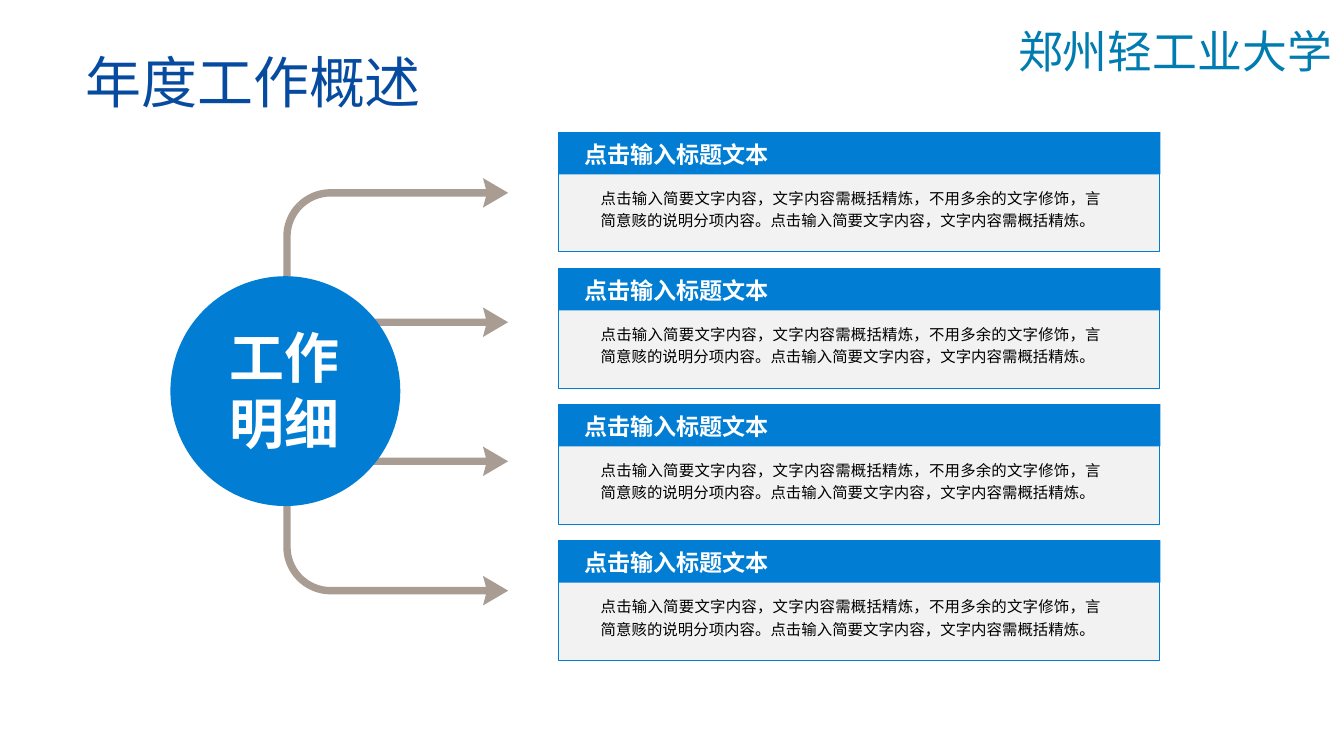
from math import cos, radians, sin

from lxml.etree import SubElement
from pptx import Presentation
from pptx.dml.color import RGBColor
from pptx.enum.shapes import MSO_SHAPE as Shape
from pptx.enum.text import MSO_ANCHOR as Anchor, PP_ALIGN as Align
from pptx.oxml.ns import qn
from pptx.util import Inches, Pt

FONT = "Noto Sans CJK SC"
BLUE = RGBColor(0x01, 0x7E, 0xD3)
NAVY = RGBColor(0x07, 0x4B, 0xA0)
TEAL = RGBColor(0x00, 0x7C, 0xB1)
TAUPE = RGBColor(0xA8, 0x9C, 0x93)
PALE = RGBColor(0xF2, 0xF2, 0xF2)
WHITE = RGBColor(0xFF, 0xFF, 0xFF)
BLACK = RGBColor(0x00, 0x00, 0x00)
HEADING = "点击输入标题文本"
BODY = ("点击输入简要文字内容，文字内容需概括精炼，不用多余的文字修饰，"
        "言简意赅的说明分项内容。点击输入简要文字内容，文字内容需概括精炼。")

deck = Presentation()
deck.slide_width, deck.slide_height = Inches(13.33), Inches(7.5)
page = deck.slides.add_slide(deck.slide_layouts[6])
CELL = deck.slide_height / 22.5  # the slide is a grid of 40 columns by 22.5 rows


def add_block(preset, left, top, width, height, color):
    """Add a plain filled shape, placed in grid cells."""
    block = page.shapes.add_shape(
        preset, *(round(n * CELL) for n in (left, top, width, height)))
    block.shadow.inherit = False
    block.fill.solid()
    block.fill.fore_color.rgb = color
    block.line.fill.background()
    return block


def add_text(text, left, top, width, height, size, color, bold=False, align=Align.LEFT):
    """Add a one-paragraph text box, placed in grid cells."""
    box = page.shapes.add_textbox(*(round(n * CELL) for n in (left, top, width, height)))
    box.text_frame.word_wrap = True
    para = box.text_frame.paragraphs[0]
    para.text = text
    para.alignment = align
    para.font.name, para.font.size, para.font.bold = FONT, Pt(size), bold
    para.font.color.rgb = color
    style = para._p.pPr.find(qn("a:defRPr"))
    SubElement(style, qn("a:ea")).set("typeface", FONT)
    return box


# Titles
add_text("郑州轻工业大学", 30, 0.57, 10, 1.74, 32, TEAL)
title = add_text("年度工作概述", 0, 1.14, 15.06, 2.52, 40, NAVY, align=Align.CENTER)
title.text_frame.vertical_anchor = Anchor.MIDDLE

# Arrows: heights are distances from the middle row, mirrored above and below it
MIDDLE, HALF = 11.66, 0.11
BEND_X, RADIUS = 9.84, 1.3
OUTER_ROW, INNER_ROW, STEM_FOOT = 5.92, 2.07, 0.94
ARC_STEPS = 12
arcs = {}
for first, last in ((180, 135), (135, 90)):
    angles = [radians(first + (last - first) * i / ARC_STEPS) for i in range(ARC_STEPS + 1)]
    arcs[first] = [[(BEND_X + r * cos(a), OUTER_ROW - RADIUS + r * sin(a)) for a in angles]
                   for r in (RADIUS + HALF, RADIUS - HALF)]
stem_out, stem_in = arcs[180]
turn_out, turn_in = arcs[135]
head = [(14.46, HALF), (14.37, 0.44), (15.12, 0), (14.37, -0.44), (14.46, -HALF)]
outer_head, inner_head = ([(x, row + y) for x, y in head] for row in (OUTER_ROW, INNER_ROW))
tail_x = BEND_X - RADIUS - HALF
pieces = [
    [(tail_x, STEM_FOOT), *stem_out, *reversed(stem_in), (tail_x + 2 * HALF, STEM_FOOT)],
    [*turn_out, *outer_head, *reversed(turn_in)],
    [(tail_x, INNER_ROW + HALF), *inner_head, (tail_x, INNER_ROW - HALF)],
]
for side in (-1, 1):
    for piece in pieces:
        points = [(round(x * CELL), round((MIDDLE + side * y) * CELL)) for x, y in piece]
        builder = page.shapes.build_freeform(*points[0])
        builder.add_line_segments(points[1:], close=True)
        arrow = builder.convert_to_shape()
        arrow.shadow.inherit = False
        arrow.fill.solid()
        arrow.fill.fore_color.rgb = TAUPE
        arrow.line.fill.background()

# Hub
add_block(Shape.OVAL, 5.07, 8.22, 6.84, 6.84, BLUE)
add_text("工作明细", 6.33, 9.48, 4.29, 4.26, 39.2, WHITE, True, Align.CENTER)

# Cards
CARD_X, CARD_TOP, CARD_PITCH = 16.62, 3.93, 4.05
for number in range(4):
    top = CARD_TOP + number * CARD_PITCH
    card = add_block(Shape.RECTANGLE, CARD_X, top, 17.88, 3.57, PALE)
    card.line.color.rgb = BLUE
    card.line.width = Pt(0.75)
    add_block(Shape.RECTANGLE, CARD_X, top, 17.91, 1.26, BLUE)
    add_text(HEADING, CARD_X + 0.48, top + 0.09, 6.84, 1.14, 16.5, WHITE, True)
    body = add_text(BODY, CARD_X + 0.96, top + 1.44, 15.48, 1.65, 11, BLACK,
                    align=Align.JUSTIFY)
    body.text_frame.paragraphs[0].line_spacing = Pt(15.9)

deck.save("out.pptx")
